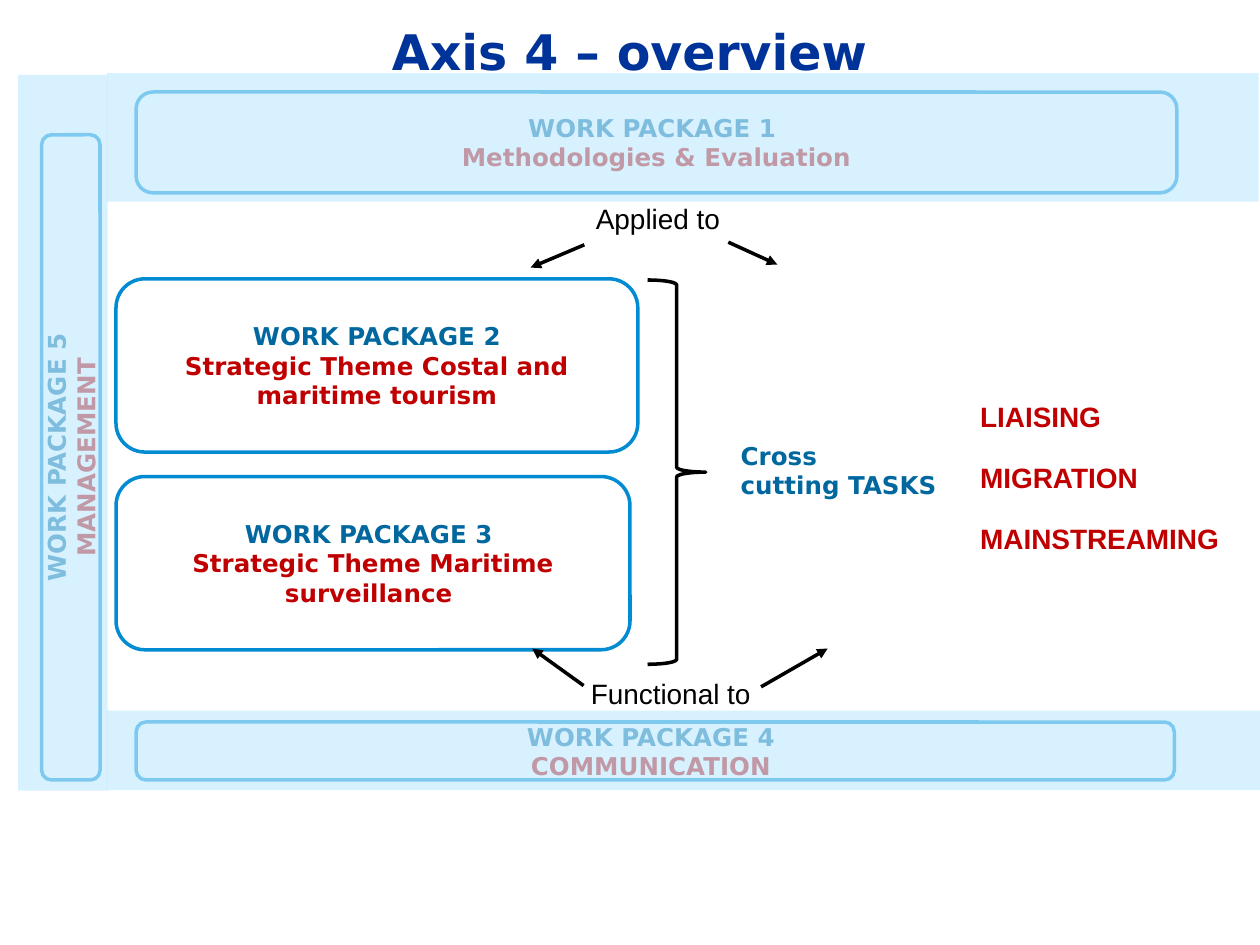
from lxml.etree import SubElement
from pptx import Presentation
from pptx.dml.color import RGBColor as Rgb
from pptx.enum.shapes import MSO_CONNECTOR as Conn, MSO_SHAPE as Kind
from pptx.enum.text import MSO_ANCHOR as Anchor, PP_ALIGN as Align
from pptx.oxml.ns import qn
from pptx.util import Pt

HUES = {
    "title": "003399", "head": "00689E", "theme": "C00000", "edge": "008BD2",
    "veil": "C3EBFF", "ink": "000000", "paper": "FFFFFF",
}
SANS = "Arial"
WIDE = "DejaVu Sans"


def hue(name):
    return Rgb.from_string(HUES[name])


def add_run(par, text, size, font, color, bold=True):
    run = par.add_run()
    run.text = text
    run.font.size = Pt(size)
    run.font.name = font
    run.font.bold = bold
    run.font.color.rgb = hue(color)


def add_shape(slide, kind, box, fill=None, line=None, turn=0):
    x, y, w, h = box
    if turn:
        x, y, w, h = x + (w - h) / 2, y + (h - w) / 2, h, w
    shape = slide.shapes.add_shape(kind, Pt(x), Pt(y), Pt(w), Pt(h))
    shape.rotation = turn
    shape.shadow.inherit = False
    if fill:
        shape.fill.solid()
        shape.fill.fore_color.rgb = hue(fill)
    else:
        shape.fill.background()
    if line:
        shape.line.color.rgb = hue(line)
        shape.line.width = Pt(2)
    else:
        shape.line.fill.background()
    return shape


def add_text(slide, box):
    frame = slide.shapes.add_textbox(*map(Pt, box)).text_frame
    frame.word_wrap = True
    return frame.paragraphs[0]


def add_pack(slide, box, head, theme, turn=0):
    shape = add_shape(slide, Kind.ROUNDED_RECTANGLE, box, "paper", "edge", turn)
    frame = shape.text_frame
    frame.word_wrap = True
    frame.vertical_anchor = Anchor.MIDDLE
    pars = [frame.paragraphs[0], frame.add_paragraph()]
    for par, text, color in zip(pars, (head, theme), ("head", "theme")):
        par.alignment = Align.CENTER
        add_run(par, text, 14, WIDE, color)


def add_arrow(slide, x1, y1, x2, y2):
    line = slide.shapes.add_connector(Conn.STRAIGHT, Pt(x1), Pt(y1), Pt(x2), Pt(y2))
    line.line.color.rgb = hue("ink")
    line.line.width = Pt(2)
    SubElement(line.line._get_or_add_ln(), qn("a:tailEnd"), type="triangle")
    SubElement(line._element.spPr, qn("a:effectLst"))


def draw_band(slide, box, inset, head, theme, turn=0):
    x, y, w, h = box
    left, top, right, base = inset
    inner = (x + left, y + top, w - left - right, h - top - base)
    add_pack(slide, inner, head, theme, turn)
    veil = add_shape(slide, Kind.RECTANGLE, box, "veil", turn=turn)
    color = veil.fill._xPr.find(qn("a:solidFill"))[0]
    SubElement(color, qn("a:alpha"), val="65000")


def draw_themes(slide, box):
    x, y, w, h = box
    tall, gap = 99, 14
    themes = (
        (w, "WORK PACKAGE 2", "Strategic Theme Costal and maritime tourism"),
        (w - 4.5, "WORK PACKAGE 3 ", "Strategic Theme Maritime surveillance "),
    )
    for i, (wide, head, theme) in enumerate(themes):
        add_pack(slide, (x, y + i * (tall + gap), wide, tall), head, theme)
    add_shape(slide, Kind.RIGHT_BRACE, (x + w + 5.5, y + 0.7, 33.3, h), line="ink")


def draw_tasks(slide, box):
    x, y, w, h = box
    par = add_text(slide, (x, y + 23.7, 168.5, 41))
    add_run(par, "Cross ", 14, WIDE, "head")
    par.add_line_break()
    add_run(par, "cutting TASKS", 14, WIDE, "head")
    tall = 26.6
    step = (h - tall) / 2
    for i, task in enumerate(("LIAISING", "MIGRATION", "MAINSTREAMING")):
        par = add_text(slide, (x + 136.8, y + i * step, w - 136.8, tall))
        add_run(par, task, 16, SANS, "theme")


def draw_link(slide, box, text, arrows):
    x, y, w, h = box
    add_run(add_text(slide, box), text, 16, SANS, "ink", False)
    for x1, y1, x2, y2 in arrows:
        add_arrow(slide, x + x1, y + y1, x + x2, y + y2)


def draw_title(slide, box):
    par = add_text(slide, box)
    par.alignment = Align.CENTER
    add_run(par, "Axis 4 – overview", 28, WIDE, "title")


def main():
    deck = Presentation()
    deck.slide_width, deck.slide_height = Pt(720), Pt(540)
    slide = deck.slides.add_slide(deck.slide_layouts[6])
    draw_themes(slide, (66.3, 159.3, 298.2, 219.6))
    draw_tasks(slide, (416.2, 224.7, 289.4, 96.5))
    draw_link(slide, (333.4, 111.6, 87.8, 26.6), "Applied to",
              ((0.5, 28.3, -30.2, 41.3), (82.8, 26.8, 110.8, 39.6)))
    draw_link(slide, (330.5, 383, 115.9, 26.6), "Functional to",
              ((104.4, 9.5, 142.5, -12.4), (3, 8.8, -26.4, -12.4)))
    draw_band(slide, (61.2, 41.8, 658, 73.4), (16.6, 10.8, 46.7, 5),
              "WORK PACKAGE 1 ", "Methodologies & Evaluation")
    draw_band(slide, (10.4, 42.8, 51.1, 409), (13.4, 34.2, 4.3, 6.1),
              "WORK PACKAGE 5", "MANAGEMENT", 270)
    draw_band(slide, (61.2, 406.1, 658.8, 45.4), (16.6, 6.5, 49, 5.8),
              "WORK PACKAGE 4 ", "COMMUNICATION ")
    draw_title(slide, (0, 8.6, 719.3, 49))
    deck.save("out.pptx")


if __name__ == "__main__":
    main()
